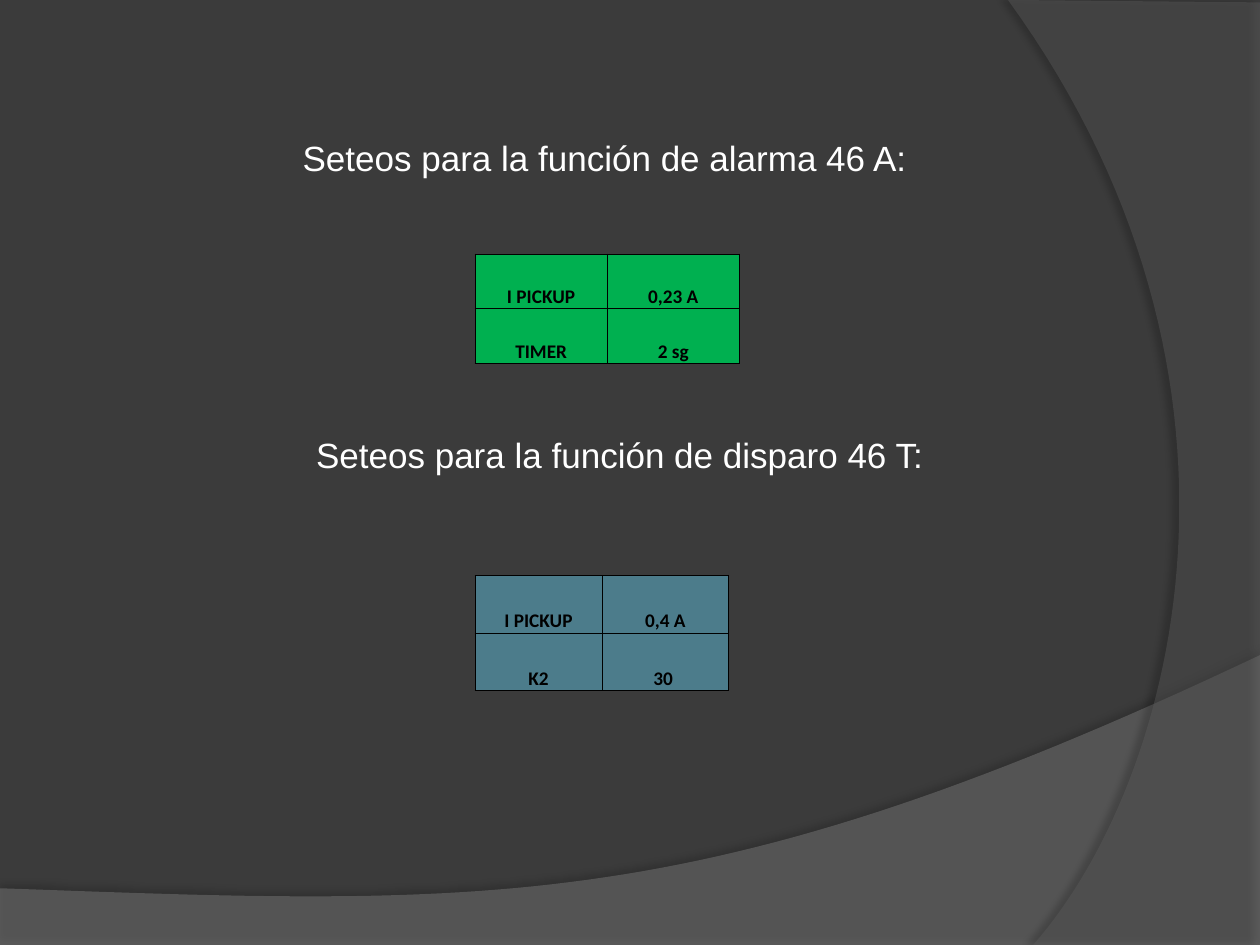
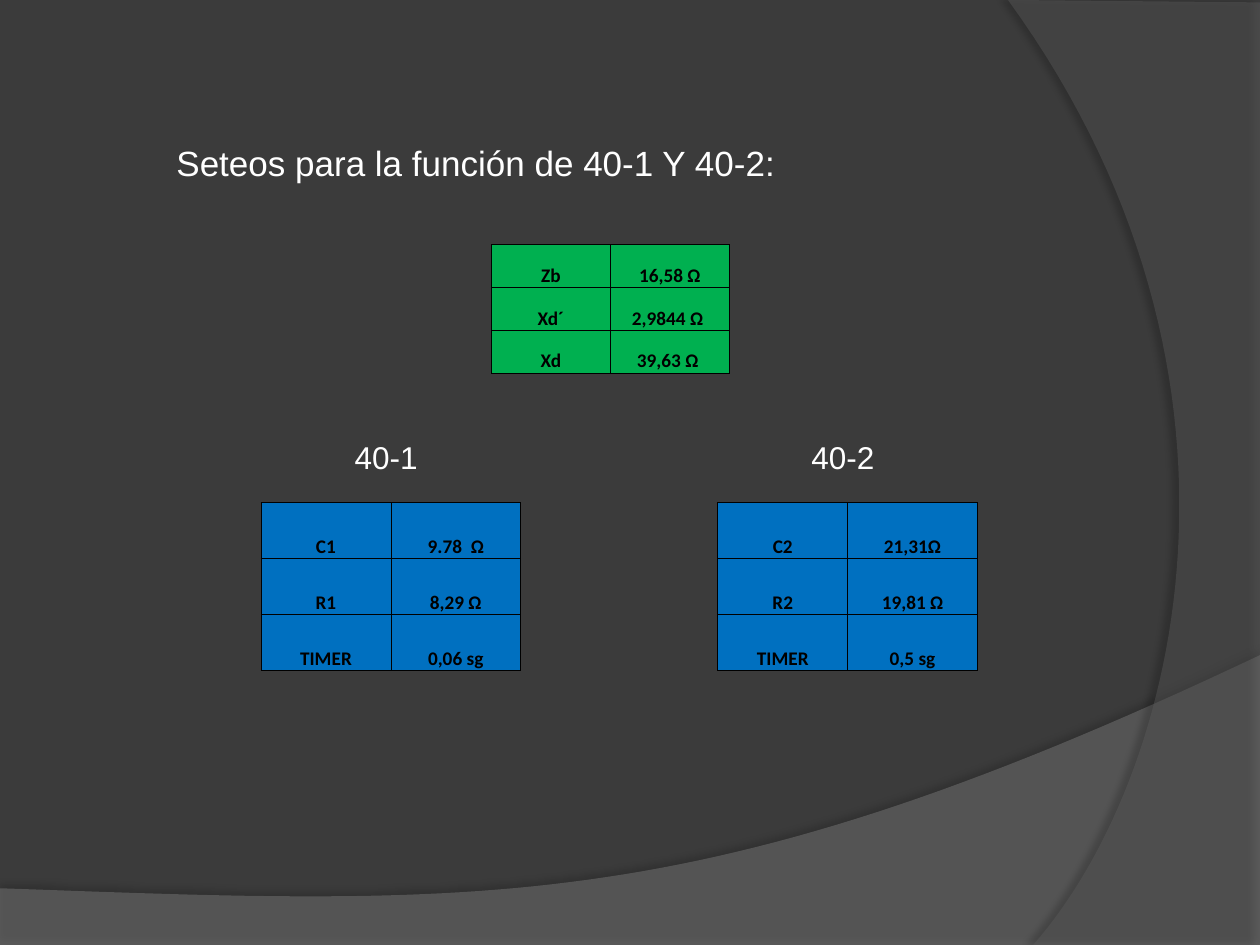
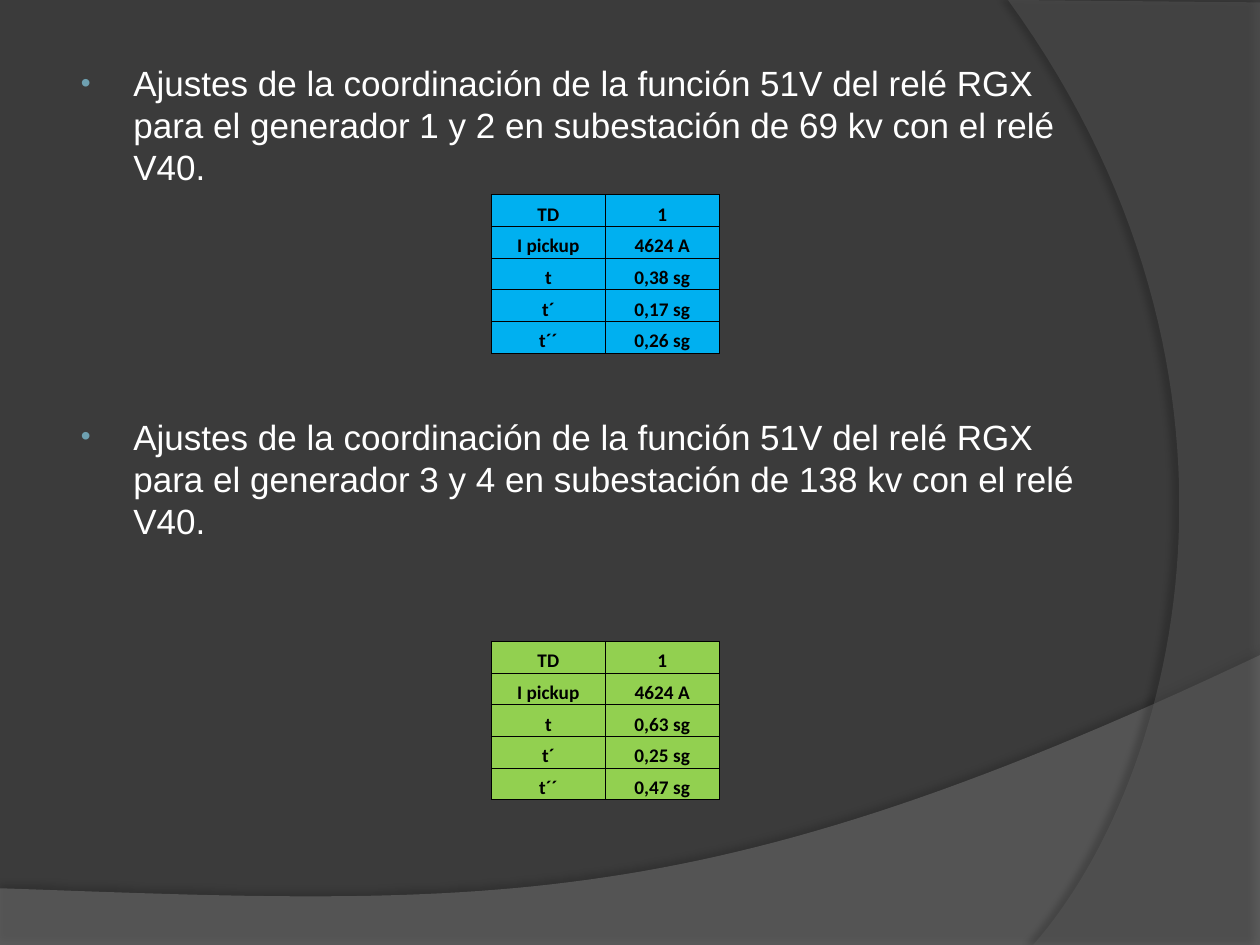
from lxml.etree import SubElement
from pptx import Presentation
from pptx.dml.color import RGBColor
from pptx.enum.text import MSO_ANCHOR, MSO_AUTO_SIZE, PP_ALIGN
from pptx.oxml.ns import qn
from pptx.util import Pt

COLORS = {
    "background": "3B3B3B",
    "bottom_wave": "7F7F7F",
    "side_wave": "5E5E5E",
    "text": "FFFFFF",
    "bullet": "6EA0B0",
    "cell_text": "000000",
    "border": "000000",
    "shadow": "000000",
    "green": "00B050",
    "teal": "4C7C8B",
    "blue": "0070C0",
    "sky": "00B0F0",
    "lime": "92D050",
}
TEXT_FONT, TABLE_FONT = "Arial", "Calibri"
WIDTH, HEIGHT = 720, 540
TITLE_ONLY, TITLE_AND_BODY = 5, 1


def rgb(name):
    return RGBColor.from_string(COLORS[name])


def add_color(parent, name, alpha=None):
    clr = SubElement(parent, qn("a:srgbClr"), val=COLORS[name])
    if alpha is not None:
        SubElement(clr, qn("a:alpha"), val=str(alpha * 1000))


def format_font(font, size, name, color, bold=False):
    font.size, font.name, font.bold = Pt(size), name, bold
    font.color.rgb = rgb(color)


def place(sp, box):
    sp.left, sp.top, sp.width, sp.height = (Pt(v) for v in box)


def bezier(p0, p1, p2, p3, steps=60):
    """Return the points of a cubic curve, without its start."""
    points = []
    for i in range(1, steps + 1):
        t = i / steps
        weights = ((1 - t) ** 3, 3 * t * (1 - t) ** 2, 3 * t * t * (1 - t), t ** 3)
        points.append(tuple(sum(w * p[axis] for w, p in zip(weights, (p0, p1, p2, p3)))
                            for axis in (0, 1)))
    return points


def add_wave(slide, points, color, alpha, shadow_alpha, distance, angle):
    """Draw a closed outline, kept to hundredths of a point so that curves stay smooth."""
    start, *rest = [(x * 100, y * 100) for x, y in points]
    builder = slide.shapes.build_freeform(*start, scale=Pt(0.01))
    builder.add_line_segments(rest, close=True)
    sp = builder.convert_to_shape()
    sp.fill.solid()
    sp.fill.fore_color.rgb = rgb(color)
    sp.line.fill.background()
    spPr = sp.element.spPr
    SubElement(spPr.find(".//" + qn("a:srgbClr")), qn("a:alpha"), val=str(alpha * 1000))
    sp.shadow.inherit = False
    shadow = SubElement(spPr.find(qn("a:effectLst")), qn("a:outerShdw"),
                        blurRad=str(Pt(4)), dist=str(Pt(distance)),
                        dir=str(angle * 60000), algn="ctr", rotWithShape="0")
    add_color(shadow, "shadow", shadow_alpha)
    return sp


def decorate_master(prs, slide):
    """Draw the waves on a slide and move them to the master."""
    master = prs.slide_master
    master.background.fill.solid()
    master.background.fill.fore_color.rgb = rgb("background")
    bottom_end, side_start = (0, 507.6), (590.4, 540)
    bottom = [bottom_end, (0, HEIGHT), (WIDTH, HEIGHT), (WIDTH, 374.4)]
    bottom += bezier(bottom[-1], (402.5, 524.9), (281.5, 517.7), bottom_end)
    side = [(WIDTH, 1.4), (WIDTH, HEIGHT), side_start]
    side += bezier(side_start, (673.2, 445.7), (733, 216), (576, 0))
    waves = (add_wave(slide, bottom, "bottom_wave", 45, 35, 3.5, 270),
             add_wave(slide, side, "side_wave", 40, 45, 4, 180))
    tree = master.element.find(".//" + qn("p:spTree"))
    for i, sp in enumerate(waves):
        sp.element.nvSpPr.cNvPr.set("id", str(100 + i))
        tree.insert(2 + i, sp.element)


def fill_heading(sp, text, size=20, align=PP_ALIGN.LEFT, wrap=True):
    tf = sp.text_frame
    tf.text = text
    tf.word_wrap = wrap
    tf.auto_size = MSO_AUTO_SIZE.SHAPE_TO_FIT_TEXT
    tf.vertical_anchor = MSO_ANCHOR.TOP
    p = tf.paragraphs[0]
    p.alignment = align
    format_font(p.runs[0].font, size, TEXT_FONT, "text")


def add_title(slide, box, text, align=PP_ALIGN.LEFT):
    place(slide.shapes.title, box)
    fill_heading(slide.shapes.title, text, align=align)


def add_label(slide, box, text, size=20, wrap=True):
    fill_heading(slide.shapes.add_textbox(*(Pt(v) for v in box)), text, size, wrap=wrap)


def format_cell(cell, text, color):
    cell.text = text
    cell.vertical_anchor = MSO_ANCHOR.BOTTOM
    cell.margin_left = cell.margin_right = cell.margin_top = Pt(0.7)
    cell.margin_bottom = 0
    tcPr = cell._tc.get_or_add_tcPr()
    for side in ("lnL", "lnR", "lnT", "lnB"):
        ln = SubElement(tcPr, qn("a:" + side), w=str(Pt(0.5)))
        add_color(SubElement(ln, qn("a:solidFill")), "border")
    cell.fill.solid()
    cell.fill.fore_color.rgb = rgb(color)
    p = cell.text_frame.paragraphs[0]
    p.alignment = PP_ALIGN.CENTER
    format_font(p.runs[0].font, 11, TABLE_FONT, "cell_text", bold=True)


def add_settings_table(slide, box, rows, color):
    """Fill the box with equal rows of name and value."""
    left, top, width, height = box
    table = slide.shapes.add_table(len(rows), 2, *(Pt(v) for v in box)).table
    table.first_row = table.horz_banding = False
    for column in table.columns:
        column.width = Pt(width / 2)
    for row, texts in zip(table.rows, rows):
        row.height = Pt(height / len(rows))
        for cell, text in zip(row.cells, texts):
            format_cell(cell, text, color)


def add_bullets(slide, box, texts, gap):
    body = slide.placeholders[1]
    place(body, box)
    tf = body.text_frame
    tf.text = "\n".join(texts)
    tf.auto_size = MSO_AUTO_SIZE.NONE
    for i, p in enumerate(tf.paragraphs):
        pPr = p._p.get_or_add_pPr()
        pPr.set("marL", str(Pt(33)))
        pPr.set("indent", str(Pt(-30)))
        p.space_before = Pt(gap if i else 0)
        add_color(SubElement(pPr, qn("a:buClr")), "bullet")
        SubElement(pPr, qn("a:buSzPct"), val="80000")
        SubElement(pPr, qn("a:buFont"), typeface=TEXT_FONT)
        SubElement(pPr, qn("a:buChar"), char="•")
        format_font(p.runs[0].font, 20, TEXT_FONT, "text")


def build_function_46(slide):
    add_title(slide, (161.3, 74.2, 368.6, 31.5),
              "Seteos para la función de alarma 46 A:", PP_ALIGN.CENTER)
    add_settings_table(slide, (271.5, 145.2, 151, 62.5),
                       [("I PICKUP", "0,23 A"), ("TIMER", "2 sg")], "green")
    add_label(slide, (173.5, 244.1, 373.7, 31.5), "Seteos para la función de disparo 46 T:")
    add_settings_table(slide, (271.5, 328.8, 145, 65.8),
                       [("I PICKUP", "0,4 A"), ("K2", "30 ")], "teal")


def build_function_40(slide):
    add_title(slide, (93.6, 77.3, 368.6, 31.5), "Seteos para la función de 40-1 Y 40-2:")
    add_settings_table(slide, (280.8, 139.7, 136, 73.6),
                       [("Zb", "16,58 Ω"), ("Xd´", "2,9844 Ω "), ("Xd", "39,63 Ω ")], "green")
    zones = (
        ("40-1", 149.2, [("C1", "9.78  Ω"), ("R1", "8,29 Ω"), ("TIMER", "0,06 sg")]),
        ("40-2", 410.2, [("C2", "21,31Ω"), ("R2", "19,81 Ω"), ("TIMER", "0,5 sg")]),
    )
    for name, left, rows in zones:
        add_settings_table(slide, (left, 287.2, 148.4, 96), rows, "blue")
        add_label(slide, (left + 46.4, 246.6, 51, 29), name, 18, wrap=False)


def build_function_51v(slide):
    title = slide.shapes.title.element
    title.getparent().remove(title)
    generators = (("1 y 2", "69"), ("3 y 4", "138"))
    add_bullets(slide, (36, 31.7, 588.2, 450),
                [f"Ajustes de la coordinación de la función 51V del relé RGX para el generador "
                 f"{units} en subestación de {kv} kv con el relé V40."
                 for units, kv in generators], gap=130)
    tables = ((111.2, "sky", ("0,38 sg", "0,17 sg", "0,26 sg")),
              (366.5, "lime", ("0,63 sg", "0,25 sg", "0,47 sg")))
    for top, color, times in tables:
        rows = [("TD", "1"), ("I pickup", "4624 A"), *zip(("t", "t´", "t´´"), times)]
        add_settings_table(slide, (280.8, top, 130.2, 90.7), rows, color)


def main():
    prs = Presentation()
    prs.slide_width, prs.slide_height = Pt(WIDTH), Pt(HEIGHT)
    pages = ((TITLE_ONLY, build_function_46), (TITLE_ONLY, build_function_40),
             (TITLE_AND_BODY, build_function_51v))
    for layout, build in pages:
        build(prs.slides.add_slide(prs.slide_layouts[layout]))
    decorate_master(prs, prs.slides[0])
    prs.save("out.pptx")


if __name__ == "__main__":
    main()
